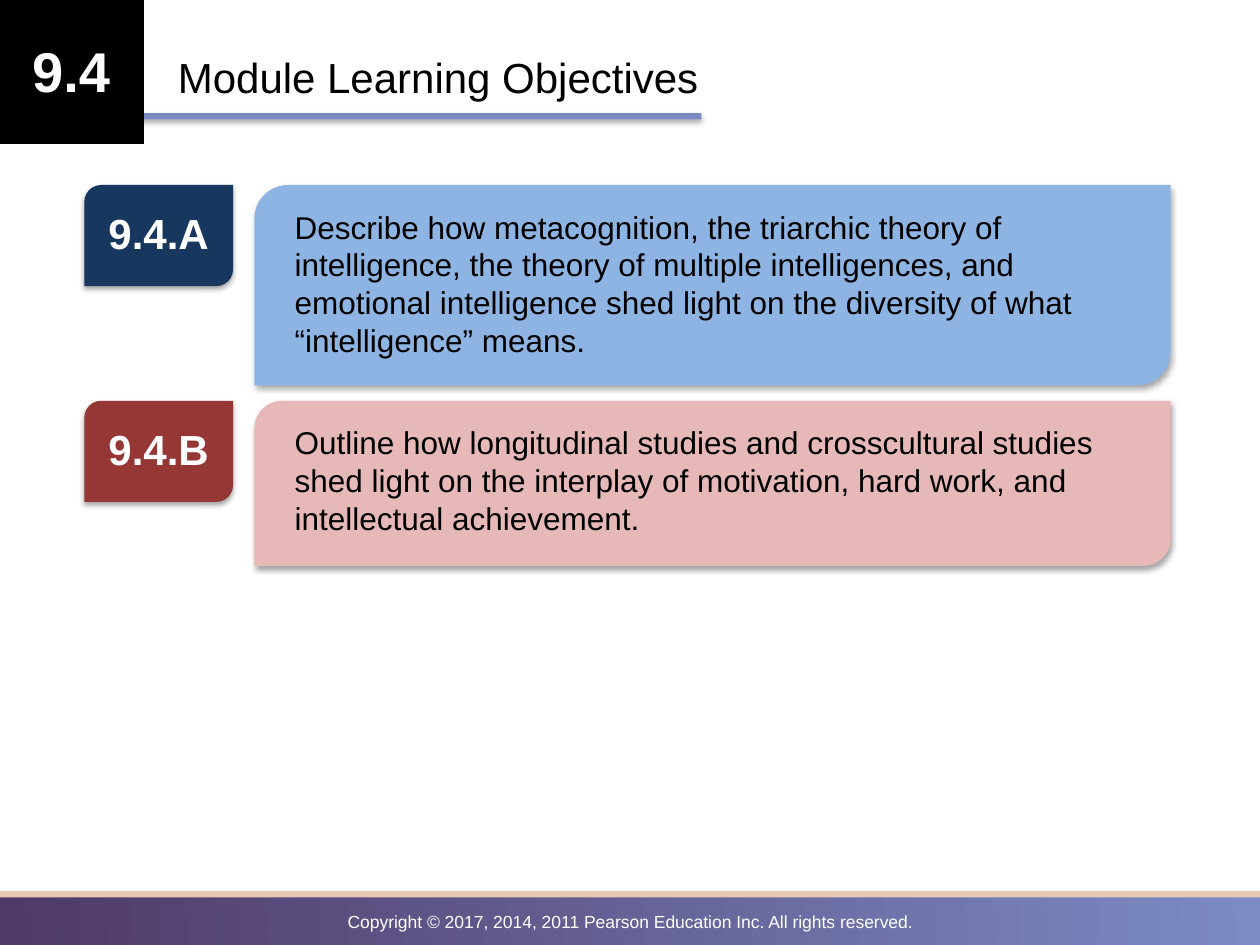
from dataclasses import dataclass

from lxml.etree import SubElement
from pptx import Presentation
from pptx.dml.color import RGBColor
from pptx.enum.shapes import MSO_SHAPE
from pptx.enum.text import MSO_ANCHOR, MSO_AUTO_SIZE, PP_ALIGN
from pptx.oxml.ns import qn
from pptx.util import Cm, Pt


@dataclass(frozen=True)
class Theme:
    font: str = "Arial"
    black: str = "000000"
    white: str = "FFFFFF"
    accent: str = "7C8BC4"
    footer_dark: str = "4F3967"
    footer_edge: str = "E7C8B3"
    navy: str = "17375E"
    light_blue: str = "8EB4E3"
    dark_red: str = "953735"
    pink: str = "E6B9B8"
    module_size: int = 32
    heading_size: int = 24
    body_size: int = 18
    footer_size: int = 10


SLIDE_WIDTH, SLIDE_HEIGHT = 25.4, 19.05
BADGE_LEFT, BADGE_WIDTH, BADGE_HEIGHT = 1.7, 3, 2.04
PANEL_LEFT, PANEL_WIDTH = 5.13, 18.47
FIRST_TOP, ROW_GAP = 3.73, 0.31
TEXT_INSET_X, TEXT_INSET_Y = 0.56, 0.33

OBJECTIVES = [
    ("9.4.A", "Describe how metacognition, the triarchic theory of intelligence, "
     "the theory of multiple intelligences, and emotional intelligence shed light "
     "on the diversity of what “intelligence” means.",
     4.04, Theme.navy, Theme.light_blue),
    ("9.4.B", "Outline how longitudinal studies and crosscultural studies shed light "
     "on the interplay of motivation, hard work, and intellectual achievement.",
     3.33, Theme.dark_red, Theme.pink),
]


def write_text(shape, text, *, size, color, font, bold=False, align=PP_ALIGN.LEFT):
    frame = shape.text_frame
    frame.word_wrap = True
    frame.auto_size = MSO_AUTO_SIZE.NONE
    frame.vertical_anchor = MSO_ANCHOR.TOP
    paragraph = frame.paragraphs[0]
    paragraph.alignment = align
    run = paragraph.add_run()
    run.text = text
    run.font.name = font
    run.font.size = Pt(size)
    run.font.bold = bold
    run.font.color.rgb = RGBColor.from_string(color)


def add_soft_shadow(shape):
    effects = shape._element.spPr.find(qn("a:effectLst"))
    shadow = SubElement(effects, qn("a:outerShdw"), blurRad=str(Pt(3.1)),
                        dist=str(Pt(1.8)), dir="5400000", rotWithShape="0")
    color = SubElement(shadow, qn("a:srgbClr"), val=Theme.black)
    SubElement(color, qn("a:alpha"), val="35000")


class SlideBuilder:
    def __init__(self, slide, theme):
        self.slide = slide
        self.theme = theme

    def title(self, text, left, top, width, height):
        title = self.slide.shapes.title
        title.left, title.top = Cm(left), Cm(top)
        title.width, title.height = Cm(width), Cm(height)
        write_text(title, text, size=self.theme.heading_size,
                   color=self.theme.black, font=self.theme.font)

    def block(self, left, top, width, height, fill, *, shapes=None,
              kind=MSO_SHAPE.RECTANGLE, shadow=False):
        shapes = shapes or self.slide.shapes
        shape = shapes.add_shape(kind, Cm(left), Cm(top), Cm(width), Cm(height))
        shape.fill.solid()
        shape.fill.fore_color.rgb = RGBColor.from_string(fill)
        shape.line.fill.background()
        shape.shadow.inherit = False
        if shadow:
            add_soft_shadow(shape)
        return shape

    def label(self, text, left, top, width, height, *, shapes=None, **style):
        shapes = shapes or self.slide.shapes
        box = shapes.add_textbox(Cm(left), Cm(top), Cm(width), Cm(height))
        write_text(box, text, font=self.theme.font, **style)

    def footer(self, text):
        theme = self.theme
        band = self.block(0, 17.98, SLIDE_WIDTH, 1.14, theme.footer_dark)
        band.fill.gradient()
        band.fill.gradient_angle = 4
        for stop, color in zip(band.fill.gradient_stops, (theme.footer_dark, theme.accent)):
            stop.color.rgb = RGBColor.from_string(color)
        self.block(0, 17.96, 25.53, 0.13, theme.footer_edge)
        self.label(text, 0, 18.24, SLIDE_WIDTH, 0.69, size=theme.footer_size,
                   color=theme.white, align=PP_ALIGN.CENTER)

    def module_number(self, text):
        theme = self.theme
        self.block(-0.51, 2.28, 14.65, 0.13, theme.accent, shadow=True)
        shapes = self.slide.shapes.add_group_shape().shapes
        self.block(-0.03, -0.03, 2.93, 2.93, theme.black, shapes=shapes)
        self.label(text, -0.03, 0.61, 2.93, 1.62, shapes=shapes, size=theme.module_size,
                   color=theme.white, bold=True, align=PP_ALIGN.CENTER)

    def card(self, text, left, top, width, height, fill, *, inset=0, **style):
        shapes = self.slide.shapes.add_group_shape().shapes
        self.block(left, top, width, height, fill, shapes=shapes,
                   kind=MSO_SHAPE.ROUND_2_DIAG_RECTANGLE, shadow=True)
        self.label(text, left + inset, top + TEXT_INSET_Y, width - 1.3 * inset,
                   height - 2.2 * TEXT_INSET_Y, shapes=shapes, **style)

    def objective(self, code, text, top, height, badge_color, panel_color):
        theme = self.theme
        self.card(code, BADGE_LEFT, top, BADGE_WIDTH, BADGE_HEIGHT, badge_color,
                  size=theme.heading_size, color=theme.white, bold=True,
                  align=PP_ALIGN.CENTER)
        self.card(text, PANEL_LEFT, top, PANEL_WIDTH, height, panel_color,
                  inset=TEXT_INSET_X, size=theme.body_size, color=theme.black)


def main():
    presentation = Presentation()
    presentation.slide_width = Cm(SLIDE_WIDTH)
    presentation.slide_height = Cm(SLIDE_HEIGHT)
    slide = presentation.slides.add_slide(presentation.slide_layouts.get_by_name("Title Only"))
    builder = SlideBuilder(slide, Theme())
    builder.footer("Copyright © 2017, 2014, 2011 Pearson Education Inc. All rights reserved.")
    builder.module_number("9.4")
    builder.title("Module Learning Objectives", 3.33, 0.91, 19.58, 1.27)
    top = FIRST_TOP
    for code, text, height, badge_color, panel_color in OBJECTIVES:
        builder.objective(code, text, top, height, badge_color, panel_color)
        top += height + ROW_GAP
    presentation.save("out.pptx")


if __name__ == "__main__":
    main()
